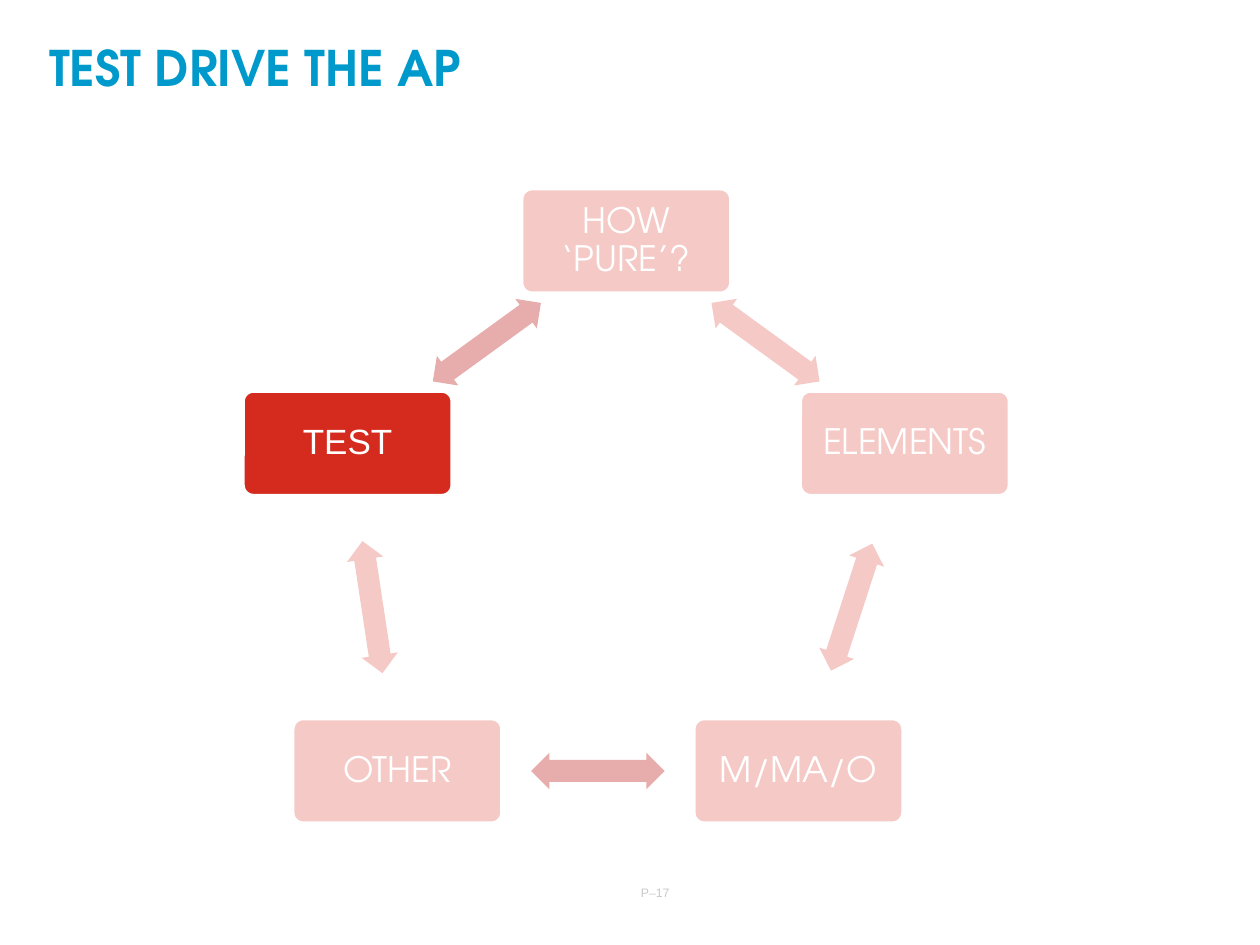
from math import atan2, cos, degrees, radians, sin

from lxml import etree
from pptx import Presentation
from pptx.dml.color import RGBColor
from pptx.enum.shapes import MSO_SHAPE
from pptx.enum.text import MSO_ANCHOR, PP_ALIGN
from pptx.oxml.ns import qn
from pptx.util import Inches, Pt

ROUND, ARROW = MSO_SHAPE.ROUNDED_RECTANGLE, MSO_SHAPE.LEFT_RIGHT_ARROW
TOP, MIDDLE = MSO_ANCHOR.TOP, MSO_ANCHOR.MIDDLE
LEFT, CENTER = PP_ALIGN.LEFT, PP_ALIGN.CENTER

WIDE, HIGH = 10, 7.5
SANS, PLAIN, SERIF = "TeX Gyre Adventor", "Arial", "TeX Gyre Schola"
RED, PINK, BLUE, WHITE, GREY = "D52B1E", "E7ADAC", "0099CC", "FFFFFF", "C9CAC8"
FAINT, SOLID = 25, 100  # fill opacity in percent

# Label, font, fill opacity, sideways shift from the even ring
STEPS = [
    ("HOW ‘PURE’?", SANS, FAINT, 0),
    ("ELEMENTS", SANS, FAINT, 0),
    ("M/MA/O", SANS, FAINT, 0),
    ("OTHER", SANS, FAINT, -0.45),
    ("TEST", PLAIN, SOLID, 0),
]
# Fill of the arrow that leaves each step
LINKS = [(RED, FAINT), (RED, FAINT), (PINK, SOLID), (RED, FAINT), (PINK, SOLID)]


def color(code):
    return RGBColor.from_string(code)


def paint(shape, code, alpha):
    shape.shadow.inherit = False
    shape.fill.solid()
    shape.fill.fore_color.rgb = color(code)
    if alpha < SOLID:
        tint = shape.fill._xPr.find(qn("a:solidFill"))[0]
        etree.SubElement(tint, qn("a:alpha"), val=str(alpha * 1000))


def write(shape, runs, size, code, align, anchor, pad, bold=False):
    frame = shape.text_frame
    frame.word_wrap = True
    frame.vertical_anchor = anchor
    (frame.margin_left, frame.margin_top,
     frame.margin_right, frame.margin_bottom) = [Inches(n) for n in pad]
    para = frame.paragraphs[0]
    para.alignment = align
    for text, face in runs:
        run = para.add_run()
        run.text = text
        run.font.name, run.font.size, run.font.bold = face, Pt(size), bold
        run.font.color.rgb = color(code)
    return para


def add_mid(slide, kind, mid, size):
    (x, y), (w, h) = mid, size
    return slide.shapes.add_shape(
        kind, Inches(x - w / 2), Inches(y - h / 2), Inches(w), Inches(h))


def add_step(slide, mid, size, label, face, alpha):
    card = add_mid(slide, ROUND, mid, size)
    card.adjustments[0] = 0.1
    paint(card, RED, alpha)
    card.line.color.rgb = color(WHITE)
    card.line.width = Pt(2)
    para = write(card, [(label, face)], 20, WHITE, CENTER, MIDDLE, [0.08] * 4)
    para.line_spacing = 0.9


def add_link(slide, start, end, size, code, alpha):
    mid = [(a + b) / 2 for a, b in zip(start, end)]
    link = add_mid(slide, ARROW, mid, size)
    link.adjustments[0], link.adjustments[1] = 0.6, 0.5
    link.rotation = degrees(atan2(end[1] - start[1], end[0] - start[0])) % 360
    paint(link, code, alpha)
    link.line.fill.background()


def add_ring(slide, mid, radius):
    card = radius * 0.714, radius * 0.357
    arrow = radius * 0.456, radius * 0.125
    count = len(STEPS)
    spots = []
    for i, step in enumerate(STEPS):
        turn = radians(360 * i / count - 90)
        spots.append((mid[0] + radius * cos(turn) + step[3],
                      mid[1] + radius * sin(turn)))
    for i, (label, face, alpha, _) in enumerate(STEPS):
        add_step(slide, spots[i], card, label, face, alpha)
        add_link(slide, spots[i], spots[(i + 1) % count], arrow, *LINKS[i])


def add_text(slide, box, *style, **extra):
    area = slide.shapes.add_textbox(*[Inches(n) for n in box])
    write(area, *style, **extra)


def main():
    deck = Presentation()
    deck.slide_width, deck.slide_height = Inches(WIDE), Inches(HIGH)
    slide = deck.slides.add_slide(deck.slide_layouts[6])

    # Title
    add_text(slide, (0.35, 0.3, 9.22, 0.77), [("TEST DRIVE THE AP", SANS)],
             28, BLUE, LEFT, TOP, (0.04, 0, 0.08, 0), bold=True)
    # Ring of steps
    add_ring(slide, (WIDE * 0.497, HIGH * 0.565), HIGH * 0.31)
    # Page number
    add_text(slide, (4.61, 6.94, 1.18, 0.28),
             [("P", PLAIN), ("–", SERIF), ("17", PLAIN)],
             7, GREY, CENTER, MIDDLE, (0.1, 0.05, 0.1, 0.05))

    deck.save("out.pptx")


if __name__ == "__main__":
    main()
